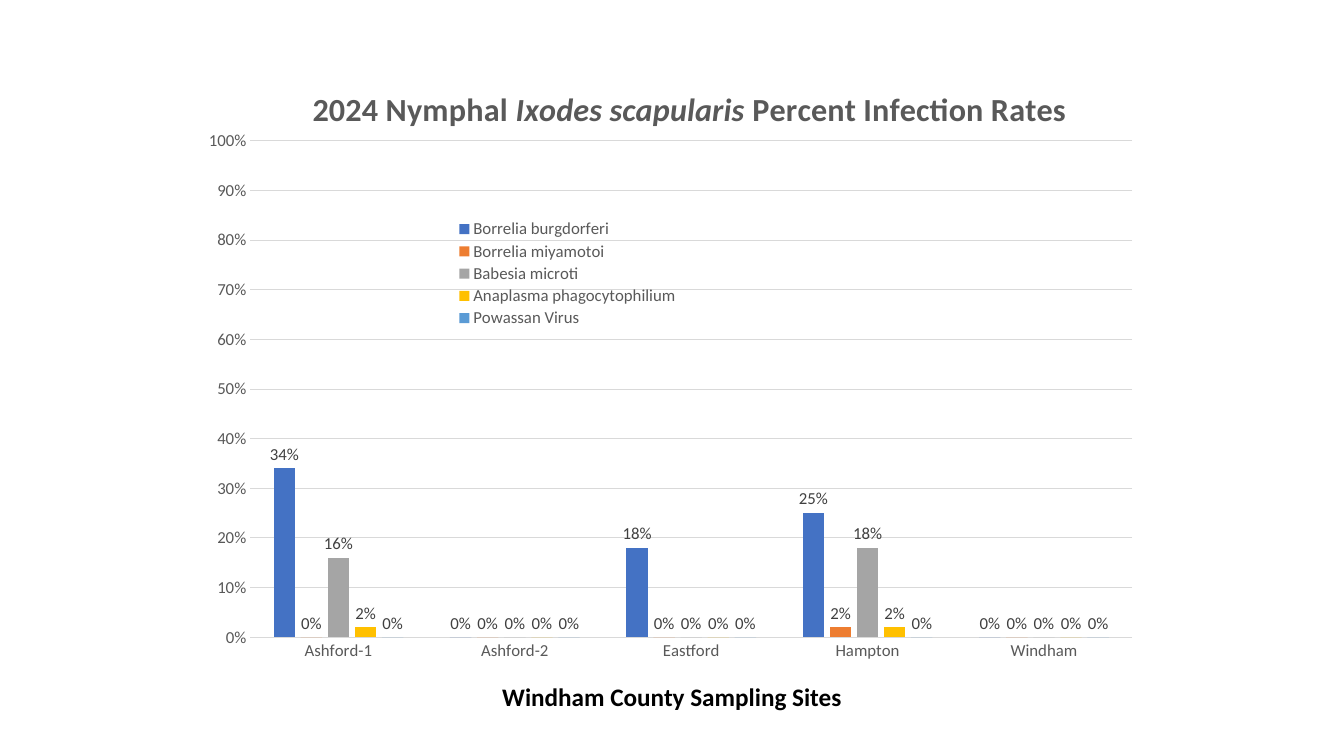
"""Build a slide charting tick infection rates at Windham County sampling sites."""
from dataclasses import dataclass

from pptx import Presentation, util as u
from pptx.chart.data import CategoryChartData
from pptx.dml.color import RGBColor
from pptx.enum import chart as ce, text as te
from pptx.oxml import parse_xml
from pptx.oxml.ns import nsdecls, qn

FONT = "Calibri"
PERCENT = "0%"
COLORS = {
    "text": "595959", "label": "404040", "grid": "D9D9D9", "caption": "000000",
    "blue": "4472C4", "orange": "ED7D31", "gray": "A5A5A5",
    "gold": "FFC000", "sky": "5B9BD5",
}
SITES = ["Ashford-1", "Ashford-2", "Eastford", "Hampton", "Windham"]


@dataclass
class Pathogen:
    name: str
    rates: list[float]
    color: str


@dataclass
class Area:
    x: float
    y: float
    w: float = 0
    h: float = 0


PATHOGENS = [
    Pathogen("Borrelia burgdorferi", [0.34, 0, 0.18, 0.25, 0], "blue"),
    Pathogen("Borrelia miyamotoi", [0, 0, 0, 0.02, 0], "orange"),
    Pathogen("Babesia microti", [0.16, 0, 0, 0.18, 0], "gray"),
    Pathogen("Anaplasma phagocytophilium", [0.02, 0, 0, 0.02, 0], "gold"),
    Pathogen("Powassan Virus", [0, 0, 0, 0, 0], "sky"),
]
TITLE_RUNS = [("2024 Nymphal ", False), ("Ixodes scapularis", True),
              (" Percent Infection Rates", False)]
CHART = Area(0.145, 0.105, 0.711, 0.791)
CAPTION = Area(0.365, 0.895, 0.27, 0.053)
TITLE = Area(0.12, 0.01)
PLOT = Area(0.058, 0.103, 0.923, 0.83)
LEGEND = Area(0.27, 0.23, 0.24, 0.19)


def color(name: str) -> RGBColor:
    return RGBColor.from_string(COLORS[name])


def style_font(font, size: float, name: str, bold: bool = False) -> None:
    font.name, font.size, font.bold = FONT, u.Pt(size), bold
    font.color.rgb = color(name)


def place(prs, area: Area) -> list[int]:
    return [int(prs.slide_width * area.x), int(prs.slide_height * area.y),
            int(prs.slide_width * area.w), int(prs.slide_height * area.h)]


def set_layout(element, index: int, area: Area, inner: bool = False) -> None:
    for old in element.findall(qn("c:layout")):
        element.remove(old)
    target = '<c:layoutTarget val="inner"/>' if inner else ""
    modes = '<c:xMode val="edge"/><c:yMode val="edge"/>'
    sizes = f'<c:w val="{area.w}"/><c:h val="{area.h}"/>' if area.w else ""
    element.insert(index, parse_xml(
        f'<c:layout {nsdecls("c")}><c:manualLayout>{target}{modes}'
        f'<c:x val="{area.x}"/><c:y val="{area.y}"/>{sizes}'
        '</c:manualLayout></c:layout>'))


def add_title(chart) -> None:
    chart.has_title = True
    title = chart.chart_title
    p = title.text_frame.paragraphs[0]
    for text, italic in TITLE_RUNS:
        r = p.add_run()
        r.text = text
        style_font(r.font, 23, "text", True)
        r.font.italic = italic
    set_layout(title._element, 1, TITLE)


def style_axes(chart) -> None:
    for axis in (chart.category_axis, chart.value_axis):
        axis.major_tick_mark = axis.minor_tick_mark = ce.XL_TICK_MARK.NONE
        style_font(axis.tick_labels.font, 12, "text")
    values = chart.value_axis
    values.minimum_scale, values.maximum_scale, values.major_unit = 0, 1, 0.1
    values.tick_labels.number_format = PERCENT
    values.tick_labels.number_format_is_linked = False
    values.format.line.fill.background()
    values.has_major_gridlines = True
    for line in (values.major_gridlines.format.line,
                 chart.category_axis.format.line):
        line.color.rgb = color("grid")
        line.width = u.Pt(0.75)


def style_series(series, pathogen: Pathogen) -> None:
    series.format.fill.solid()
    series.format.fill.fore_color.rgb = color(pathogen.color)
    series.invert_if_negative = False
    labels = series.data_labels
    labels.show_value = True
    labels.number_format, labels.number_format_is_linked = PERCENT, False
    labels.position = ce.XL_LABEL_POSITION.OUTSIDE_END
    style_font(labels.font, 12, "label")


def add_rates_chart(prs, s) -> None:
    data = CategoryChartData(number_format=PERCENT)
    data.categories = SITES
    for pathogen in PATHOGENS:
        data.add_series(pathogen.name, pathogen.rates)
    chart = s.shapes.add_chart(ce.XL_CHART_TYPE.COLUMN_CLUSTERED,
                               *place(prs, CHART), data).chart
    style_font(chart.font, 10, "caption")
    add_title(chart)
    style_axes(chart)
    plot = chart.plots[0]
    plot.gap_width, plot.overlap, plot.vary_by_categories = 219, -27, False
    for series, pathogen in zip(plot.series, PATHOGENS):
        style_series(series, pathogen)
    set_layout(chart._chartSpace.chart.plotArea, 0, PLOT, inner=True)
    chart.has_legend = True
    legend = chart.legend
    legend.position = ce.XL_LEGEND_POSITION.RIGHT
    legend.include_in_layout = False
    style_font(legend.font, 12, "text")
    set_layout(legend._element, 1, LEGEND)


def add_caption(prs, s) -> None:
    tf = s.shapes.add_textbox(*place(prs, CAPTION)).text_frame
    tf.word_wrap = False
    tf.auto_size = te.MSO_AUTO_SIZE.SHAPE_TO_FIT_TEXT
    p = tf.paragraphs[0]
    p.alignment = te.PP_ALIGN.CENTER
    r = p.add_run()
    r.text = "Windham County Sampling Sites"
    style_font(r.font, 18, "caption", True)


def main() -> None:
    prs = Presentation()
    prs.slide_width, prs.slide_height = u.Inches(13.33), u.Inches(7.5)
    s = prs.slides.add_slide(prs.slide_layouts[6])
    add_rates_chart(prs, s)
    add_caption(prs, s)
    prs.save("out.pptx")


if __name__ == "__main__":
    main()
